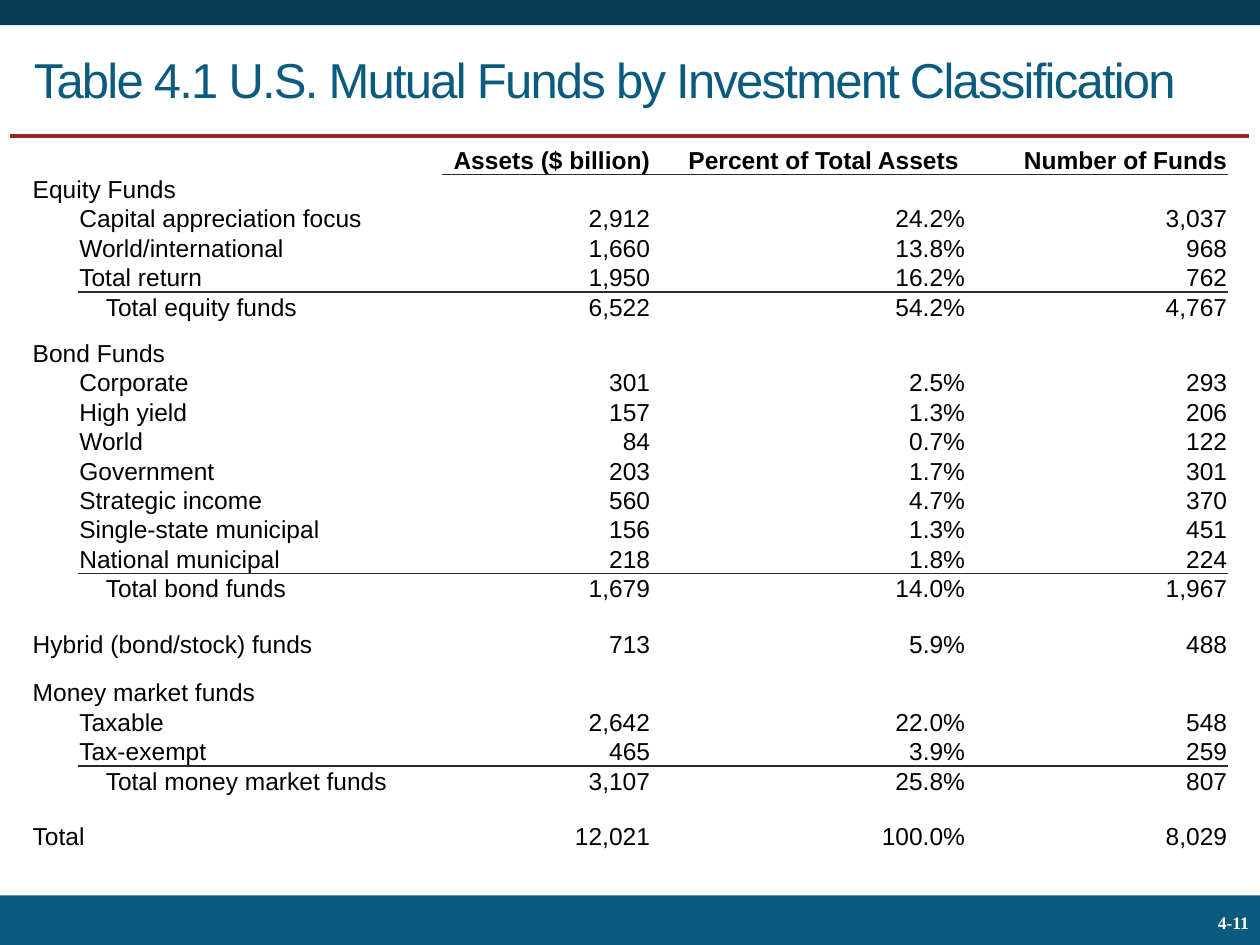
from dataclasses import dataclass
from typing import NamedTuple

from lxml.etree import SubElement
from pptx import Presentation
from pptx.dml.color import RGBColor
from pptx.enum.shapes import MSO_CONNECTOR, MSO_SHAPE
from pptx.enum.text import MSO_ANCHOR, PP_ALIGN
from pptx.oxml.ns import qn
from pptx.util import Inches, Pt


@dataclass(frozen=True)
class Theme:
    navy: str = "073D55"
    teal: str = "0B5B7F"
    red: str = "992727"
    rule: str = "292934"
    ink: str = "000000"
    white: str = "FFFFFF"
    sans: str = "Arial"
    serif: str = "Times New Roman"
    title: int = 28
    body: int = 14
    number: int = 10
    blank: int = 6


class Box(NamedTuple):
    x: float
    y: float
    w: float
    h: float


class Row(NamedTuple):
    label: str = ""
    values: tuple = ("", "", "")
    level: int = 0
    rule_from: int = 6
    bold: bool = False
    height: float = 3.02
    span: tuple = (0, 2)


T = Theme()
WIDTH, HEIGHT = Inches(10), Inches(7.5)
COLUMNS = (3.7, 4.3, 24.6, 16.6, 25, 20.8)
TOTAL_INDENT = Inches(0.22)
NO_STYLE = "{2D5ABB26-0587-4C30-8999-92F81FD0307C}"


def item(label: str, *values: str, rule_from: int = 6) -> Row:
    return Row(label, values, 1, rule_from, span=(1, 2))


def total(label: str, *values: str) -> Row:
    return Row(label, values, 2, span=(1, 2))


def gap(height: float, span: tuple = (1, 2)) -> Row:
    return Row(height=height, span=span)


HEADERS = ("Assets ($ billion)", "Percent of Total Assets", "Number of Funds")
ROWS = (
    Row(values=HEADERS, rule_from=3, bold=True, span=(0, 1)),
    Row("Equity Funds"),
    item("Capital appreciation focus", "2,912", "24.2%", "3,037"),
    item("World/international", "1,660", "13.8%", "968"),
    item("Total return", "1,950", "16.2%", "762", rule_from=1),
    total("Total equity funds", "6,522", "54.2%", "4,767"),
    gap(1.73),
    Row("Bond Funds"),
    item("Corporate", "301", "2.5%", "293"),
    item("High yield", "157", "1.3%", "206"),
    item("World", "84", "0.7%", "122"),
    item("Government", "203", "1.7%", "301"),
    item("Strategic income", "560", "4.7%", "370"),
    item("Single-state municipal", "156", "1.3%", "451"),
    item("National municipal", "218", "1.8%", "224", rule_from=1),
    total("Total bond funds", "1,679", "14.0%", "1,967"),
    gap(2.8),
    Row("Hybrid (bond/stock) funds", ("713", "5.9%", "488")),
    gap(1.95, span=(0, 1)),
    Row("Money market funds"),
    item("Taxable", "2,642", "22.0%", "548"),
    item("Tax-exempt", "465", "3.9%", "259", rule_from=1),
    total("Total money market funds", "3,107", "25.8%", "807"),
    gap(2.8),
    Row("Total", ("12,021", "100.0%", "8,029")),
)


def across(share: float) -> int:
    return round(WIDTH * share / 100)


def down(share: float) -> int:
    return round(HEIGHT * share / 100)


def place(box: Box) -> tuple:
    return across(box.x), down(box.y), across(box.w), down(box.h)


def style(p, font: str, size: int, color: str, bold: bool = False) -> None:
    for r in p.runs:
        r.font.name, r.font.size, r.font.bold = font, Pt(size), bold
        r.font.color.rgb = RGBColor.from_string(color)


def add_band(s, box: Box, color: str) -> None:
    sp = s.shapes.add_shape(MSO_SHAPE.RECTANGLE, *place(box))
    sp.shadow.inherit = False
    sp.fill.solid()
    sp.fill.fore_color.rgb = RGBColor.from_string(color)
    sp.line.fill.background()


def add_rule(s, box: Box, color: str, width: float) -> None:
    x, y, w, h = place(box)
    line = s.shapes.add_connector(MSO_CONNECTOR.STRAIGHT, x, y, x + w, y + h)
    line.line.color.rgb = RGBColor.from_string(color)
    line.line.width = Pt(width)
    SubElement(line._element.spPr, qn("a:effectLst"))


def add_text(s, box: Box, text: str):
    tf = s.shapes.add_textbox(*place(box)).text_frame
    tf.word_wrap = True
    tf.vertical_anchor = MSO_ANCHOR.MIDDLE
    tf.text = text
    return tf.paragraphs[0]


def add_border(cell, side: str, shown: bool) -> None:
    edge = SubElement(cell._tc.get_or_add_tcPr(), qn(f"a:{side}"), w=str(Pt(1)))
    if shown:
        SubElement(SubElement(edge, qn("a:solidFill")), qn("a:srgbClr"), val=T.rule)
    else:
        SubElement(edge, qn("a:noFill"))


def fill_cell(cell, text: str, align, bold: bool) -> None:
    cell.fill.background()
    cell.vertical_anchor = MSO_ANCHOR.BOTTOM
    cell.margin_left = cell.margin_right = Inches(0.01)
    cell.margin_top = cell.margin_bottom = 0
    p = cell.text_frame.paragraphs[0]
    if text:
        p.text = text
        p.alignment = align
        style(p, T.sans, T.body, T.ink, bold)
    else:
        SubElement(p._p, qn("a:endParaRPr"), sz=str(T.blank * 100))


def add_fund_table(s, box: Box) -> None:
    table = s.shapes.add_table(len(ROWS), len(COLUMNS), *place(box)).table
    table.first_row = table.horz_banding = False
    table._tbl.tblPr.find(qn("a:tableStyleId")).text = NO_STYLE
    for column, share in zip(table.columns, COLUMNS):
        column.width = across(share)
    above = Row()
    for i, row in enumerate(ROWS):
        table.rows[i].height = down(row.height)
        first, last = row.span
        labels = [""] * 3
        labels[first] = row.label
        for j, text in enumerate((*labels, *row.values)):
            cell = table.cell(i, j)
            add_border(cell, "lnT", j >= above.rule_from)
            add_border(cell, "lnB", j >= row.rule_from)
            align = PP_ALIGN.RIGHT if j > 2 else PP_ALIGN.LEFT
            fill_cell(cell, text, align, row.bold)
        table.cell(i, first).merge(table.cell(i, last))
        if row.level == 2:
            table.cell(i, first).margin_left = TOTAL_INDENT
        above = row
    table.cell(0, 4).margin_right = Inches(0.06)


def main() -> None:
    """Build the mutual fund classification slide."""
    prs = Presentation()
    prs.slide_width, prs.slide_height = WIDTH, HEIGHT
    s = prs.slides.add_slide(prs.slide_layouts[6])
    add_band(s, Box(0, 0, 100, 2.67), T.navy)
    add_rule(s, Box(0.8, 14.4, 98.3, 0), T.red, 2.25)
    add_band(s, Box(0, 94.75, 100, 5.25), T.teal)
    p = add_text(s, Box(88.4, 95.2, 11.7, 4.8), "4-11")
    p.alignment = PP_ALIGN.RIGHT
    style(p, T.serif, T.number, T.white, True)
    p = add_text(s, Box(1.7, 2.27, 96.7, 12.13),
                 "Table 4.1 U.S. Mutual Funds by Investment Classification")
    style(p, T.sans, T.title, T.teal)
    p.runs[0].font._element.set("spc", "-100")
    add_fund_table(s, Box(2.5, 15.33, 95, sum(row.height for row in ROWS)))
    prs.save("out.pptx")


if __name__ == "__main__":
    main()
